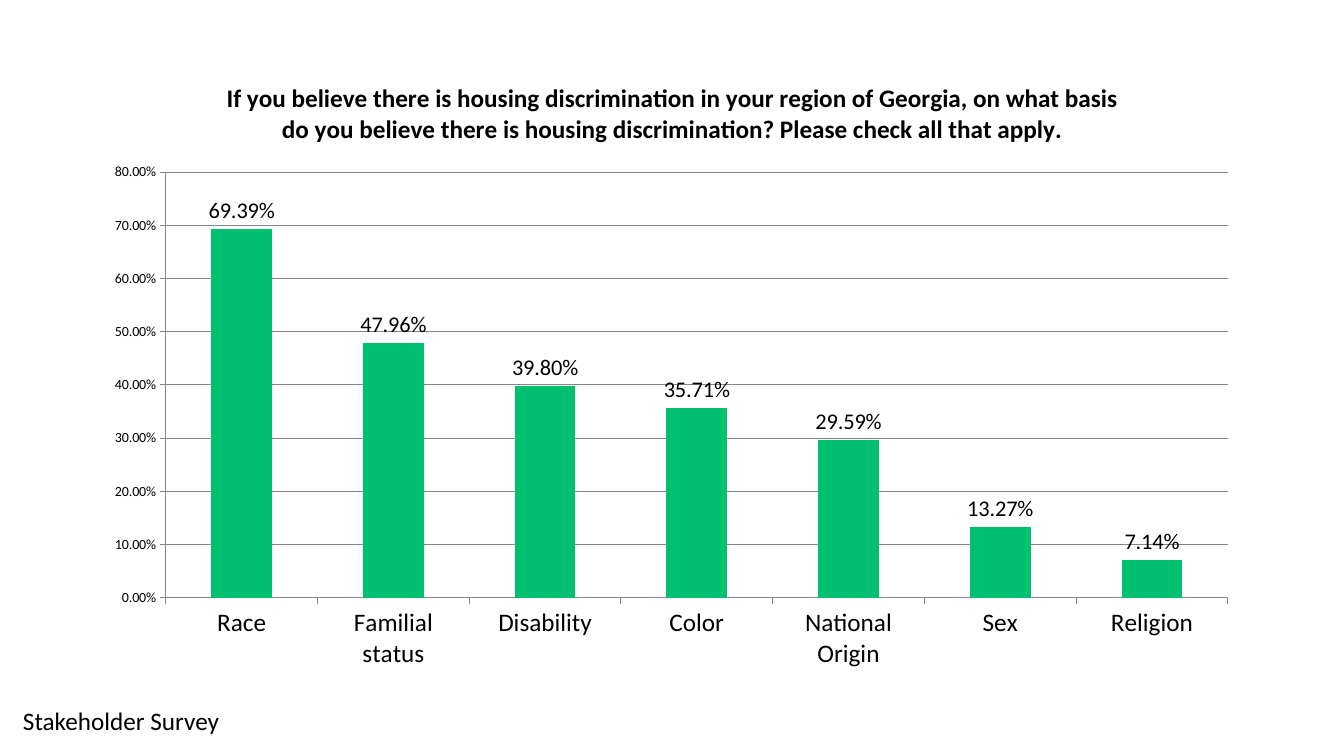
from lxml import etree
from pptx import Presentation
from pptx.chart.data import CategoryChartData
from pptx.dml.color import RGBColor
from pptx.enum.chart import XL_CHART_TYPE, XL_LABEL_POSITION, XL_TICK_MARK
from pptx.enum.text import MSO_AUTO_SIZE
from pptx.oxml.ns import qn
from pptx.util import Inches, Pt

COLUMN = XL_CHART_TYPE.COLUMN_CLUSTERED
OUTSIDE_END = XL_LABEL_POSITION.OUTSIDE_END
TICK_OUT = XL_TICK_MARK.OUTSIDE
FIT_SHAPE = MSO_AUTO_SIZE.SHAPE_TO_FIT_TEXT

COLORS = {"text": "000000", "bar": "00BF6F", "line": "868686"}
FONT = "Calibri"
PERCENT = "0.00%"
QUESTION = ("If you believe there is housing discrimination in your region of Georgia, "
            "on what basis do you believe there is housing discrimination? "
            "Please check all that apply.")
ANSWERS = {
    "Race": 0.6939,
    "Familial status": 0.4796,
    "Disability": 0.398,
    "Color": 0.3571,
    "National Origin": 0.2959,
    "Sex": 0.1327,
    "Religion": 0.0714,
}


def rgb(name):
    return RGBColor.from_string(COLORS[name])


def style_font(font, size, bold=False, color="text"):
    font.name, font.size, font.bold = FONT, Pt(size), bold
    font.color.rgb = rgb(color)


def write(tf, text, size=18, bold=False, color="text"):
    r = tf.paragraphs[0].add_run()
    r.text = text
    style_font(r.font, size, bold, color)


class SlideBuilder:
    def __init__(self, prs):
        self.s = prs.slides.add_slide(prs.slide_layouts[6])

    def text(self, text, x, y, w, h, **fmt):
        sp = self.s.shapes.add_textbox(Inches(x), Inches(y), Inches(w), Inches(h))
        tf = sp.text_frame
        tf.word_wrap = False
        tf.auto_size = FIT_SHAPE
        write(tf, text, **fmt)

    def column_chart(self, title, answers, x, y, w, h, plot):
        data = CategoryChartData(number_format=PERCENT)
        data.categories = list(answers)
        data.add_series("Series 1", list(answers.values()))
        chart = self.s.shapes.add_chart(
            COLUMN, Inches(x), Inches(y), Inches(w), Inches(h), data).chart
        style_font(chart.font, 10)
        chart.has_legend = False
        chart.has_title = True
        write(chart.chart_title.text_frame, title, size=18, bold=True)
        chart.chart_title.include_in_layout = False

        # Bars and their labels
        bars = chart.plots[0]
        bars.gap_width = 150
        bars.vary_by_categories = False
        fill = bars.series[0].format.fill
        fill.solid()
        fill.fore_color.rgb = rgb("bar")
        bars.has_data_labels = True
        labels = bars.data_labels
        labels.show_value = True
        labels.number_format, labels.number_format_is_linked = PERCENT, False
        labels.position = OUTSIDE_END
        style_font(labels.font, 16)

        # Axes and gridlines
        for axis, size in ((chart.category_axis, 18), (chart.value_axis, 10)):
            axis.major_tick_mark = TICK_OUT
            style_font(axis.tick_labels.font, size)
            axis.format.line.color.rgb = rgb("line")
        values = chart.value_axis
        values.minimum_scale, values.maximum_scale, values.major_unit = 0, 0.8, 0.1
        values.tick_labels.number_format = PERCENT
        values.tick_labels.number_format_is_linked = False
        values.has_major_gridlines = True
        values.major_gridlines.format.line.color.rgb = rgb("line")
        self.place_plot(chart, plot)

    def place_plot(self, chart, plot):
        """Fix the inner plot area as fractions of the chart."""
        area = chart.plots[0]._element.getparent()
        for old in area.findall(qn("c:layout")):
            area.remove(old)
        layout = etree.Element(qn("c:layout"))
        area.insert(0, layout)
        manual = etree.SubElement(layout, qn("c:manualLayout"))
        settings = {"layoutTarget": "inner", "xMode": "edge", "yMode": "edge",
                    **dict(zip("xywh", plot))}
        for tag, value in settings.items():
            etree.SubElement(manual, qn("c:" + tag)).set("val", str(value))


def main():
    prs = Presentation()
    prs.slide_width, prs.slide_height = Inches(13.33), Inches(7.5)
    slide = SlideBuilder(prs)
    # Survey chart
    slide.column_chart(QUESTION, ANSWERS, 0.92, 0.58, 11.5, 6.17,
                       plot=(0.063, 0.183, 0.916, 0.684))
    # Footer
    slide.text("Stakeholder Survey", 0.13, 6.95, 2.17, 0.4, size=18)
    prs.save("out.pptx")


if __name__ == "__main__":
    main()
